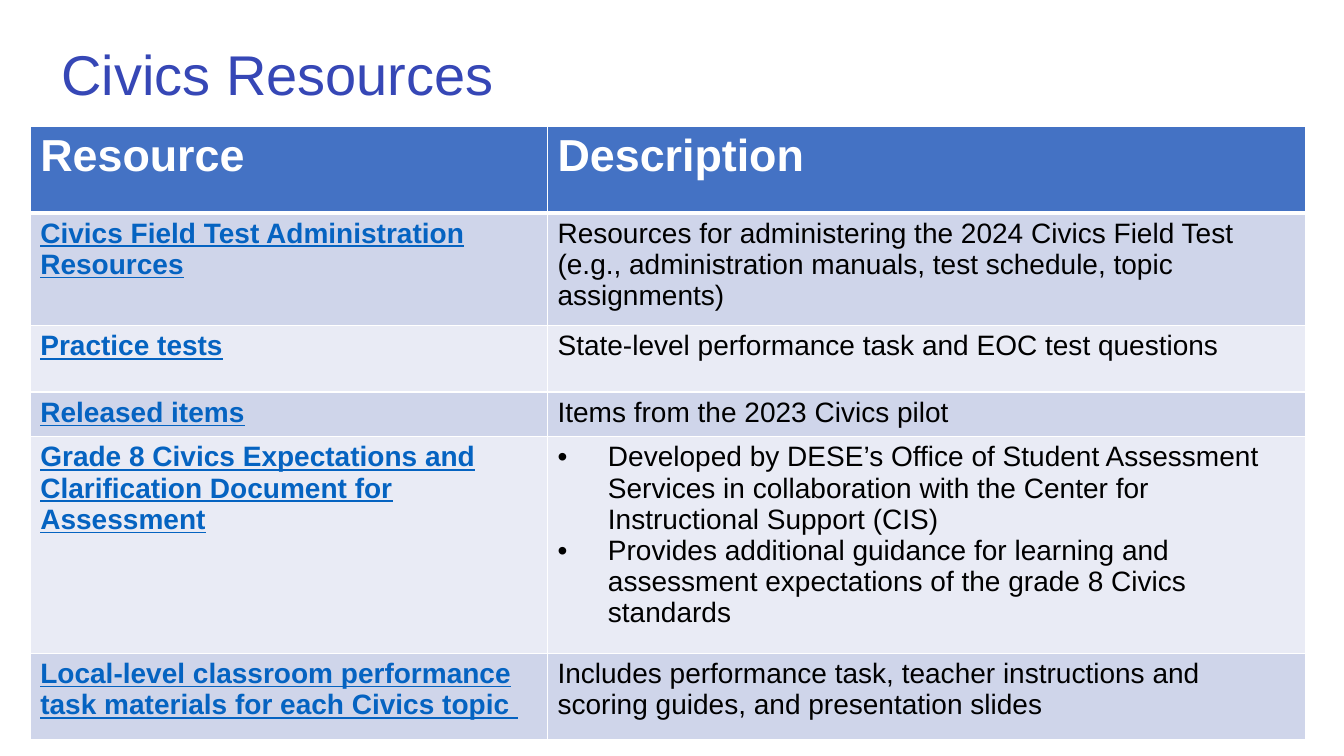
from dataclasses import dataclass

from lxml import etree
from pptx import Presentation
from pptx import util as u
from pptx.dml.color import RGBColor
from pptx.enum import text
from pptx.oxml import ns


@dataclass(frozen=True)
class Theme:
    font: str = "Arial"
    title: str = "3647B6"
    header: str = "4472C4"
    bands: tuple = ("CFD5EA", "E9EBF5")
    link: str = "0563C1"
    body: str = "000000"
    white: str = "FFFFFF"
    title_size: int = 40
    header_size: int = 32
    body_size: int = 20
    rule: int = 1
    header_rule: int = 3


HEADINGS = ("Resource", "Description ")
RESOURCES = [
    ("Civics Field Test Administration Resources",
     ["Resources for administering the 2024 Civics Field Test (e.g., administration manuals, "
      "test schedule, topic assignments)"]),
    ("Practice tests", ["State-level performance task and EOC test questions"]),
    ("Released items", ["Items from the 2023 Civics pilot"]),
    ("Grade 8 Civics Expectations and Clarification Document for Assessment",
     ["Developed by DESE’s Office of Student Assessment Services in collaboration with "
      "the Center for Instructional Support (CIS)",
      "Provides additional guidance for learning and assessment expectations of the "
      "grade 8 Civics standards"]),
    ("Local-level classroom performance task materials for each Civics topic ",
     ["Includes performance task, teacher instructions and scoring guides, "
      "and presentation slides"]),
]
COLUMN_WIDTHS = (5.13, 7.52)
ROW_HEIGHTS = (0.86, 1.12, 0.66, 0.44, 2.15, 0.86)


class SlideBuilder:
    def __init__(self, page, theme):
        self.page = page
        self.theme = theme

    def style(self, para, size, color, bold=False, underline=False):
        font = para.font
        font.name = self.theme.font
        font.size = u.Pt(size)
        font.bold = bold
        font.underline = underline
        font.color.rgb = RGBColor.from_string(color)

    def title(self, wording, left, top, width, height):
        box = self.page.shapes.add_textbox(*map(u.Inches, (left, top, width, height)))
        frame = box.text_frame
        frame.word_wrap = True
        frame.vertical_anchor = text.MSO_ANCHOR.BOTTOM
        para = frame.paragraphs[0]
        para.text = wording
        para.line_spacing = 0.9
        self.style(para, self.theme.title_size, self.theme.title)

    def table(self, left, top, widths, heights):
        frame = self.page.shapes.add_table(
            len(heights), len(widths),
            *map(u.Inches, (left, top, sum(widths), sum(heights))))
        for column, width in zip(frame.table.columns, widths):
            column.width = u.Inches(width)
        for row, height in zip(frame.table.rows, heights):
            row.height = u.Inches(height)
        return frame.table

    def borders(self, cell, top, bottom):
        properties = cell._tc.get_or_add_tcPr()
        rule = self.theme.rule
        for side, points in (("L", rule), ("R", rule), ("T", top), ("B", bottom)):
            line = etree.SubElement(properties, ns.qn(f"a:ln{side}"), w=str(u.Pt(points)))
            fill = etree.SubElement(line, ns.qn("a:solidFill"))
            etree.SubElement(fill, ns.qn("a:srgbClr"), val=self.theme.white)

    def bullet(self, para):
        properties = para._p.get_or_add_pPr()
        indent = u.Inches(0.5)
        properties.set("marL", str(indent))
        properties.set("indent", str(-indent))
        etree.SubElement(properties, ns.qn("a:buFont"), typeface=self.theme.font)
        etree.SubElement(properties, ns.qn("a:buChar"), char="•")

    def cell(self, cell, wordings, fill, rules, **style):
        """Fill one cell; several wordings become a bulleted list."""
        self.borders(cell, *rules)
        cell.fill.solid()
        cell.fill.fore_color.rgb = RGBColor.from_string(fill)
        frame = cell.text_frame
        for index, wording in enumerate(wordings):
            para = frame.add_paragraph() if index else frame.paragraphs[0]
            para.text = wording
            if len(wordings) > 1:
                self.bullet(para)
            self.style(para, **style)


def main():
    deck = Presentation()
    deck.slide_width, deck.slide_height = u.Inches(13.33), u.Inches(7.5)
    theme = Theme()
    builder = SlideBuilder(deck.slides.add_slide(deck.slide_layouts[6]), theme)

    builder.title("Civics Resources", 0.51, 0.24, 12.02, 0.88)
    table = builder.table(0.3, 1.25, COLUMN_WIDTHS, ROW_HEIGHTS)
    for column, heading in enumerate(HEADINGS):
        builder.cell(table.cell(0, column), [heading], theme.header,
                     (theme.rule, theme.header_rule),
                     size=theme.header_size, color=theme.white, bold=True)
    for row, (resource, description) in enumerate(RESOURCES, start=1):
        band = theme.bands[(row - 1) % 2]
        rules = (theme.header_rule if row == 1 else theme.rule, theme.rule)
        builder.cell(table.cell(row, 0), [resource], band, rules,
                     size=theme.body_size, color=theme.link, bold=True, underline=True)
        builder.cell(table.cell(row, 1), description, band, rules,
                     size=theme.body_size, color=theme.body)

    deck.save("out.pptx")


if __name__ == "__main__":
    main()
